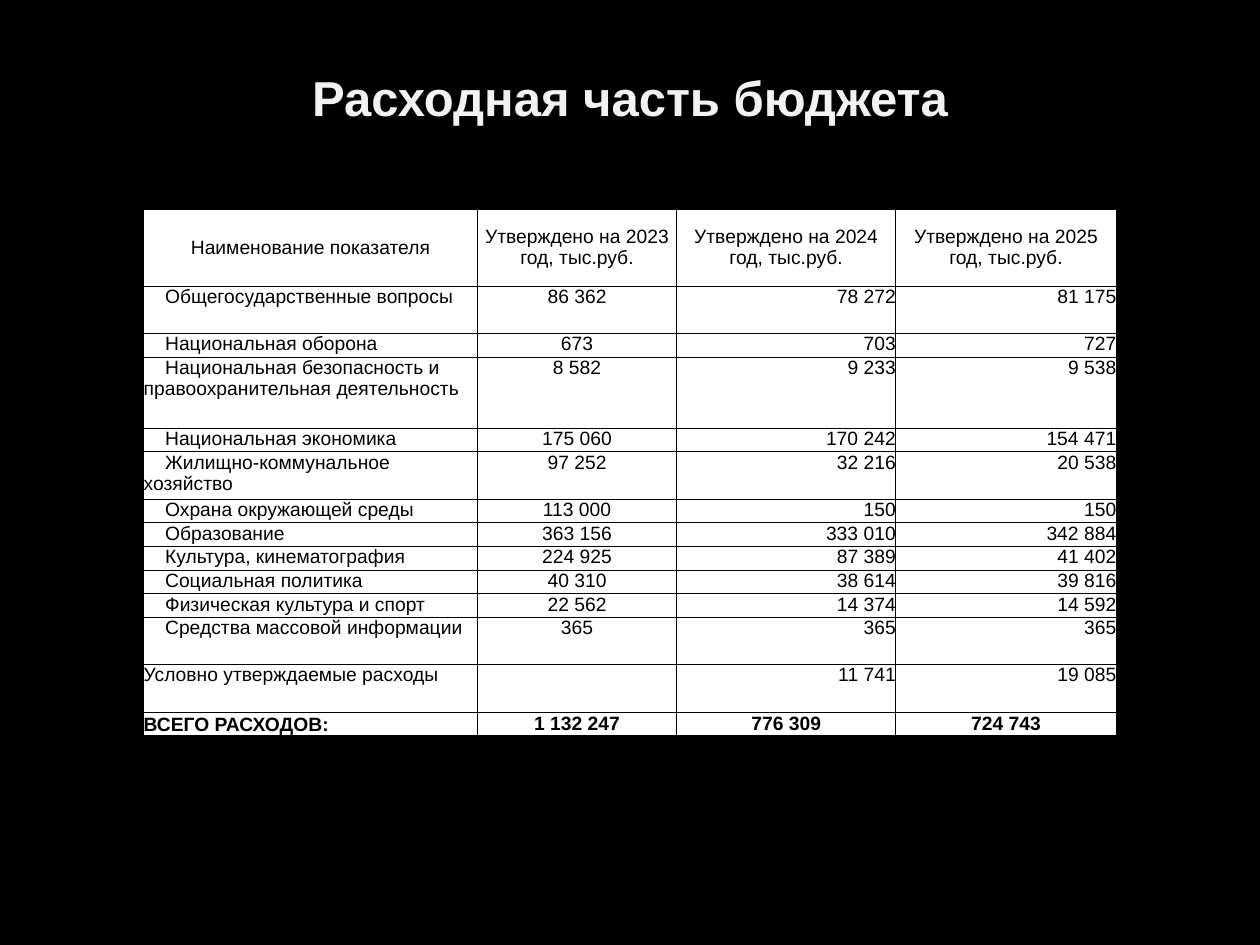
from typing import NamedTuple

from lxml.etree import SubElement
from pptx import Presentation
from pptx.dml.color import RGBColor
from pptx.enum.text import MSO_ANCHOR, PP_ALIGN
from pptx.oxml.ns import qn
from pptx.util import Inches, Pt

COLORS = {"background": "000000", "title": "F2F2F2", "cell": "FFFFFF", "ink": "000000"}
FONT = "Arial"
TABLE_LEFT, TABLE_TOP, TABLE_HEIGHT = 1.14, 1.66, 4.18
HEADER_HEIGHT = 0.61
COLUMN_WIDTHS = (2.65, 1.58, 1.74, 1.75)
YEARS = (2023, 2024, 2025)
NAME_INDENT = 0.17


class Expense(NamedTuple):
    name: str
    amounts: tuple[str, str, str]
    lines: int = 1  # row height in text lines
    indent: float = NAME_INDENT


class CellStyle(NamedTuple):
    alignment: PP_ALIGN
    anchor: MSO_ANCHOR = MSO_ANCHOR.TOP
    bold: bool = False
    indent: float = 0


EXPENSES = (
    Expense("Общегосударственные вопросы", ("86 362", "78 272", "81 175"), 2),
    Expense("Национальная оборона", ("673", "703", "727")),
    Expense("Национальная безопасность и правоохранительная деятельность",
            ("8 582", "9 233", "9 538"), 3),
    Expense("Национальная экономика", ("175 060", "170 242", "154 471")),
    Expense("Жилищно-коммунальное хозяйство", ("97 252", "32 216", "20 538"), 2),
    Expense("Охрана окружающей среды", ("113 000", "150", "150")),
    Expense("Образование", ("363 156", "333 010", "342 884")),
    Expense("Культура, кинематография", ("224 925", "87 389", "41 402")),
    Expense("Социальная политика", ("40 310", "38 614", "39 816")),
    Expense("Физическая культура и спорт", ("22 562", "14 374", "14 592")),
    Expense("Средства массовой информации", ("365", "365", "365"), 2),
    Expense("Условно утверждаемые расходы", ("", "11 741", "19 085"), 2, 0),
)
TOTAL = Expense("ВСЕГО РАСХОДОВ:", ("1 132 247", "776 309", "724 743"), indent=0)

HEADER_STYLE = CellStyle(PP_ALIGN.CENTER, MSO_ANCHOR.MIDDLE)
AMOUNT_STYLES = [CellStyle(PP_ALIGN.CENTER)] + [CellStyle(PP_ALIGN.RIGHT)] * 2
TOTAL_STYLES = [CellStyle(PP_ALIGN.LEFT, MSO_ANCHOR.BOTTOM, True)] + [
    CellStyle(PP_ALIGN.CENTER, MSO_ANCHOR.MIDDLE, True)] * 3


def set_attributes(target, values: dict) -> None:
    for name, value in values.items():
        setattr(target, name, value)


def format_font(font, size: float, color: str, bold: bool) -> None:
    set_attributes(font, {"name": FONT, "size": Pt(size), "bold": bold})
    font.color.rgb = RGBColor.from_string(COLORS[color])


def add_borders(cell) -> None:
    properties = cell._tc.get_or_add_tcPr()
    for side in ("lnL", "lnR", "lnT", "lnB"):
        line = SubElement(properties, qn(f"a:{side}"), w=str(Pt(0.5)))
        fill = SubElement(line, qn("a:solidFill"))
        SubElement(fill, qn("a:srgbClr"), val=COLORS["ink"])


def fill_cell(cell, text: str, style: CellStyle) -> None:
    add_borders(cell)
    cell.fill.solid()
    cell.fill.fore_color.rgb = RGBColor.from_string(COLORS["cell"])
    set_attributes(cell, {
        "margin_left": 0, "margin_right": 0, "margin_top": 0, "margin_bottom": 0,
        "vertical_anchor": style.anchor,
    })
    paragraph = cell.text_frame.paragraphs[0]
    paragraph.alignment = style.alignment
    if style.indent:
        paragraph_properties = paragraph._p.get_or_add_pPr()
        paragraph_properties.set("marL", "0")
        paragraph_properties.set("indent", str(Inches(style.indent)))
    if text:
        run = paragraph.add_run()
        run.text = text
        format_font(run.font, 11, "ink", style.bold)


def fill_row(table, index: int, texts, styles, height: float) -> None:
    table.rows[index].height = Inches(height)
    for cell, text, style in zip(table.rows[index].cells, texts, styles):
        fill_cell(cell, text, style)


def add_title(slide, text: str) -> None:
    title = slide.shapes.title
    set_attributes(title, {"left": Inches(0.5), "top": Inches(0.29),
                           "width": Inches(9), "height": Inches(0.96)})
    title.text_frame.text = text
    title.text_frame.vertical_anchor = MSO_ANCHOR.MIDDLE
    paragraph = title.text_frame.paragraphs[0]
    paragraph.alignment = PP_ALIGN.CENTER
    format_font(paragraph.runs[0].font, 28, "title", True)


def add_budget_table(slide) -> None:
    table = slide.shapes.add_table(
        len(EXPENSES) + 2, len(COLUMN_WIDTHS), Inches(TABLE_LEFT), Inches(TABLE_TOP),
        Inches(sum(COLUMN_WIDTHS)), Inches(TABLE_HEIGHT)).table
    set_attributes(table, {"first_row": False, "horz_banding": False})
    for column, width in zip(table.columns, COLUMN_WIDTHS):
        column.width = Inches(width)

    # Body rows share the space under the header by their line counts
    line_count = sum(expense.lines for expense in (*EXPENSES, TOTAL))
    line_height = (TABLE_HEIGHT - HEADER_HEIGHT) / line_count

    headings = ["Наименование показателя"] + [
        f"Утверждено на {year} год, тыс.руб." for year in YEARS]
    fill_row(table, 0, headings, [HEADER_STYLE] * len(headings), HEADER_HEIGHT)
    for index, expense in enumerate(EXPENSES, start=1):
        name_style = CellStyle(PP_ALIGN.LEFT, indent=expense.indent)
        fill_row(table, index, (expense.name, *expense.amounts),
                 [name_style, *AMOUNT_STYLES], expense.lines * line_height)
    fill_row(table, len(EXPENSES) + 1, (TOTAL.name, *TOTAL.amounts),
             TOTAL_STYLES, line_height)


def main() -> None:
    presentation = Presentation()
    set_attributes(presentation, {"slide_width": Inches(10), "slide_height": Inches(7.5)})
    slide = presentation.slides.add_slide(presentation.slide_layouts[5])
    slide.background.fill.solid()
    slide.background.fill.fore_color.rgb = RGBColor.from_string(COLORS["background"])
    add_title(slide, "Расходная часть бюджета")
    add_budget_table(slide)
    presentation.save("out.pptx")


if __name__ == "__main__":
    main()
